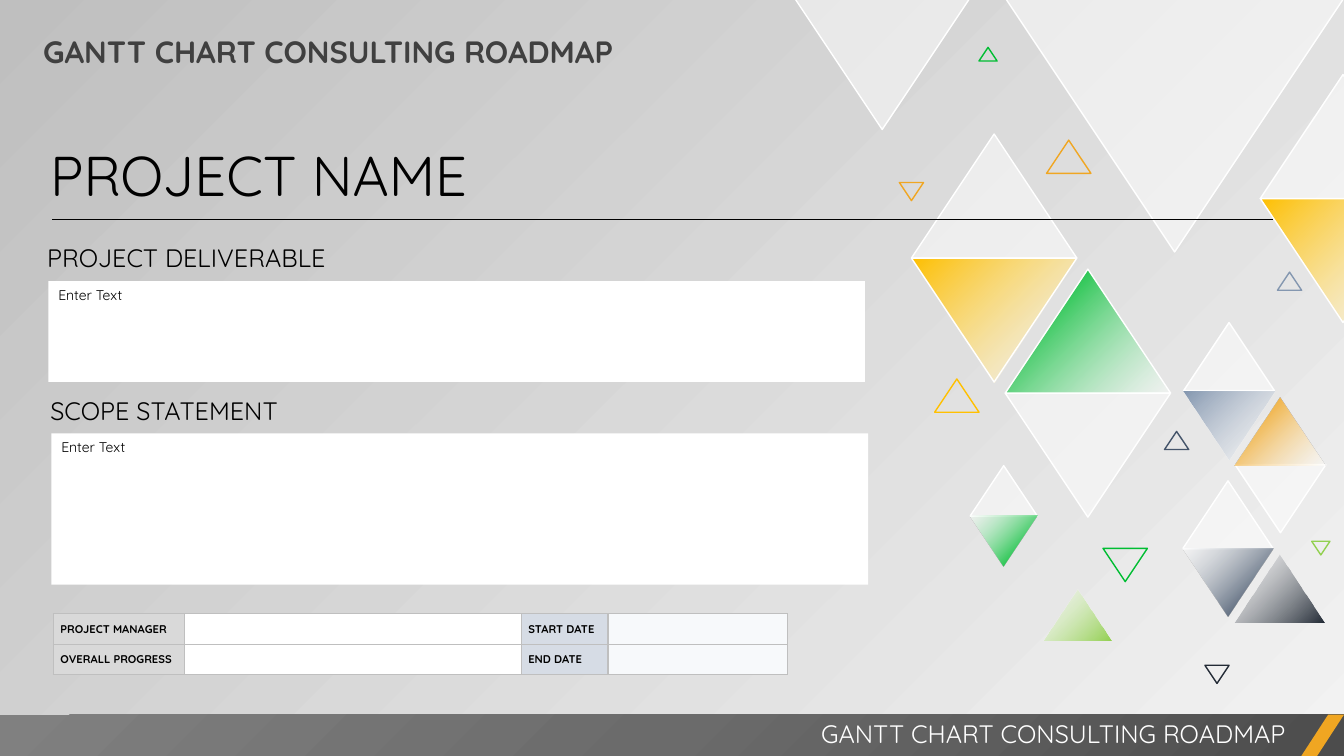
from lxml import etree
from pptx import Presentation
from pptx.dml import color as dml
from pptx.enum import shapes as kinds, text as txt
from pptx.oxml import ns
from pptx.util import Inches, Pt

FONT = "Quicksand"
TITLE = "GANTT CHART CONSULTING ROADMAP"
WHITE, BLACK, GOLD, GREEN, AMBER = "FFFFFF", "000000", "FFC000", "00BD32", "F0A622"
LIME, STEEL, SLATE, NIGHT = "92D050", "8497B0", "44546A", "222A35"
CLEAR = (WHITE, 50)

# Triangles: left, top, width, points down
PALE = [
    (9.04, 1.33, 1.64, False), (9.97, 3.9, 1.64, True),
    (9.97, -0.02, 3.36, True), (11.73, 4.77, 0.9, False),
    (11.74, 3.2, 0.9, False), (12.25, 4.61, 0.9, True),
    (9.62, 4.62, 0.67, False), (12.5, 0.74, 1.64, False),
    (7.88, -0.02, 1.74, True),
]
# The same, then colour, colour comes first, white edge
FADED = [
    (9.04, 2.56, 1.64, True, GOLD, True, True),
    (9.97, 2.67, 1.64, False, GREEN, False, True),
    (12.24, 5.5, 0.9, False, NIGHT, True, False),
    (11.73, 5.44, 0.9, True, SLATE, False, False),
    (11.74, 3.88, 0.9, True, STEEL, True, False),
    (12.25, 3.94, 0.9, False, AMBER, False, False),
    (10.35, 5.85, 0.67, False, LIME, True, False),
    (9.62, 5.12, 0.67, True, GREEN, False, False),
    (12.5, 1.97, 1.64, True, GOLD, True, True),
]
# The same, then line colour
HOLLOW = [
    (10.94, 5.44, 0.44, True, GREEN), (9.27, 3.76, 0.44, False, GOLD),
    (11.55, 4.28, 0.24, False, SLATE), (11.95, 6.6, 0.24, True, NIGHT),
    (8.92, 1.81, 0.24, True, AMBER), (12.67, 2.7, 0.24, False, STEEL),
    (9.71, 0.47, 0.18, False, GREEN), (13.01, 5.37, 0.18, True, LIME),
    (10.38, 1.39, 0.44, False, AMBER),
]


def rgb(code):
    return dml.RGBColor.from_string(code)


def sub(node, tag, **attrs):
    return etree.SubElement(node, ns.qn(tag), **attrs)


def fade(fill, root, stops, angle=225):
    """Fill with stops of (place, colour, opacity); no angle means circular."""
    fill.gradient()
    grad = root.find(".//" + ns.qn("a:gradFill"))
    for child in list(grad):
        grad.remove(child)
    marks = sub(grad, "a:gsLst")
    for place, code, alpha in stops:
        mark = sub(marks, "a:gs", pos=str(place * 1000))
        tone = sub(mark, "a:srgbClr", val=code)
        if alpha < 100:
            sub(tone, "a:alpha", val=str(alpha * 1000))
    if angle is None:
        ring = sub(grad, "a:path", path="circle")
        sub(ring, "a:fillToRect", l="100000", t="100000")
    else:
        sub(grad, "a:lin", ang=str(angle * 60000), scaled="0")


def add_form(slide, kind, left, top, width, height, fill=None, line=None):
    form = slide.shapes.add_shape(
        kind, Inches(left), Inches(top), Inches(width), Inches(height))
    form.shadow.inherit = False
    if fill:
        form.fill.solid()
        form.fill.fore_color.rgb = rgb(fill)
    else:
        form.fill.background()
    if line:
        form.line.color.rgb = rgb(line)
        form.line.width = Pt(1)
    else:
        form.line.fill.background()
    return form


def add_tri(slide, left, top, width, down, fill=None, line=None):
    tri = add_form(slide, kinds.MSO_SHAPE.ISOSCELES_TRIANGLE,
                   left, top, width, width * 0.75, fill, line)
    tri.rotation = 180 if down else 0
    return tri


def write(frame, words, size, code=BLACK, bold=False, align=txt.PP_ALIGN.LEFT):
    frame.word_wrap = True
    para = frame.paragraphs[0]
    para.text = words
    para.alignment = align
    para.font.name, para.font.size, para.font.bold = FONT, Pt(size), bold
    para.font.color.rgb = rgb(code)
    return para


def add_text(slide, left, top, width, height, words, size, **look):
    box = slide.shapes.add_textbox(
        Inches(left), Inches(top), Inches(width), Inches(height))
    write(box.text_frame, words, size, **look)


def add_entry(slide, left, top, height, head):
    """A heading with its white entry box below."""
    add_text(slide, left - 0.11, top - 0.43, 3.05, 0.4, head, 18)
    box = add_form(slide, kinds.MSO_SHAPE.RECTANGLE,
                   left, top, 8.1, height, WHITE)
    box.text_frame.vertical_anchor = txt.MSO_ANCHOR.TOP
    write(box.text_frame, "Enter Text", 10)


def edge(cell, code):
    props = cell._tc.get_or_add_tcPr()
    for spot, side in enumerate(("a:lnL", "a:lnR", "a:lnT", "a:lnB")):
        line = etree.Element(ns.qn(side), w="12700")
        sub(sub(line, "a:solidFill"), "a:srgbClr", val=code)
        props.insert(spot, line)


def add_facts(slide):
    rows = [("PROJECT MANAGER", "", "START DATE", ""),
            ("OVERALL PROGRESS", "", "END DATE", "")]
    fills = ["D9D9D9", WHITE, "D6DCE5", "F7F9FB"]
    widths = [1.3, 3.34, 0.86, 1.78]
    table = slide.shapes.add_table(
        2, 4, Inches(0.53), Inches(6.09), Inches(7.28), Inches(0.6)).table
    table.first_row = table.horz_banding = False
    for col, width in zip(table.columns, widths):
        col.width = Inches(width)
    for r, row in enumerate(rows):
        table.rows[r].height = Inches(0.3)
        for c, words in enumerate(row):
            cell = table.cell(r, c)
            cell.fill.solid()
            cell.fill.fore_color.rgb = rgb(fills[c])
            cell.vertical_anchor = txt.MSO_ANCHOR.MIDDLE
            cell.margin_left = cell.margin_right = Inches(0.07)
            cell.margin_top = cell.margin_bottom = 0
            para = write(cell.text_frame, words, 8, bold=True)
            para.line_spacing = 1.07
            edge(cell, "BFBFBF")


def add_rule(slide, left, right, top):
    rule = slide.shapes.add_connector(
        kinds.MSO_CONNECTOR.STRAIGHT,
        Inches(left), Inches(top), Inches(right), Inches(top))
    rule.line.color.rgb = rgb(BLACK)
    rule.line.width = Pt(0.5)
    sub(rule._element.spPr, "a:effectLst")


def main():
    deck = Presentation()
    deck.slide_width, deck.slide_height = Inches(13.33), Inches(7.5)
    slide = deck.slides.add_slide(deck.slide_layouts[6])
    fade(slide.background.fill, slide.element,
         [(0, "F2F2F2", 40), (100, "BFBFBF", 100)])

    # Triangle pattern
    for spot in PALE:
        tri = add_tri(slide, *spot, fill=WHITE, line=WHITE)
        tone = tri._element.spPr.find(ns.qn("a:solidFill"))[0]
        sub(tone, "a:alpha", val="50000")
    for *spot, code, first, rim in FADED:
        tri = add_tri(slide, *spot, line=WHITE if rim else None)
        stops = ([(0, code, 100), (100, *CLEAR)] if first
                 else [(0, *CLEAR), (82, code, 100)])
        fade(tri.fill, tri._element.spPr, stops)
    for *spot, code in HOLLOW:
        add_tri(slide, *spot, line=code)

    # Title and footer
    add_text(slide, 0.33, 0.28, 8.61, 0.47, TITLE, 22, code="404040", bold=True)
    bar = add_form(slide, kinds.MSO_SHAPE.RECTANGLE, 0, 7.09, 13.33, 0.42)
    fade(bar.fill, bar._element.spPr,
         [(0, "4C4C4C", 100), (50, "6B6B6B", 100), (100, "808080", 100)], None)
    slash = add_form(slide, kinds.MSO_SHAPE.PARALLELOGRAM,
                     12.9, 7.09, 0.43, 0.42, AMBER)
    slash.adjustments[0] = 0.65
    add_text(slide, 5.25, 7.08, 7.6, 0.4, TITLE, 18,
             code=WHITE, align=txt.PP_ALIGN.RIGHT)

    # Project details
    add_text(slide, 0.4, 1.35, 12.27, 0.77, "PROJECT NAME", 40)
    add_rule(slide, 0.52, 12.63, 2.18)
    add_facts(slide)
    add_entry(slide, 0.48, 2.79, 1, "PROJECT DELIVERABLE")
    add_entry(slide, 0.51, 4.3, 1.5, "SCOPE STATEMENT")
    deck.save("out.pptx")


if __name__ == "__main__":
    main()
